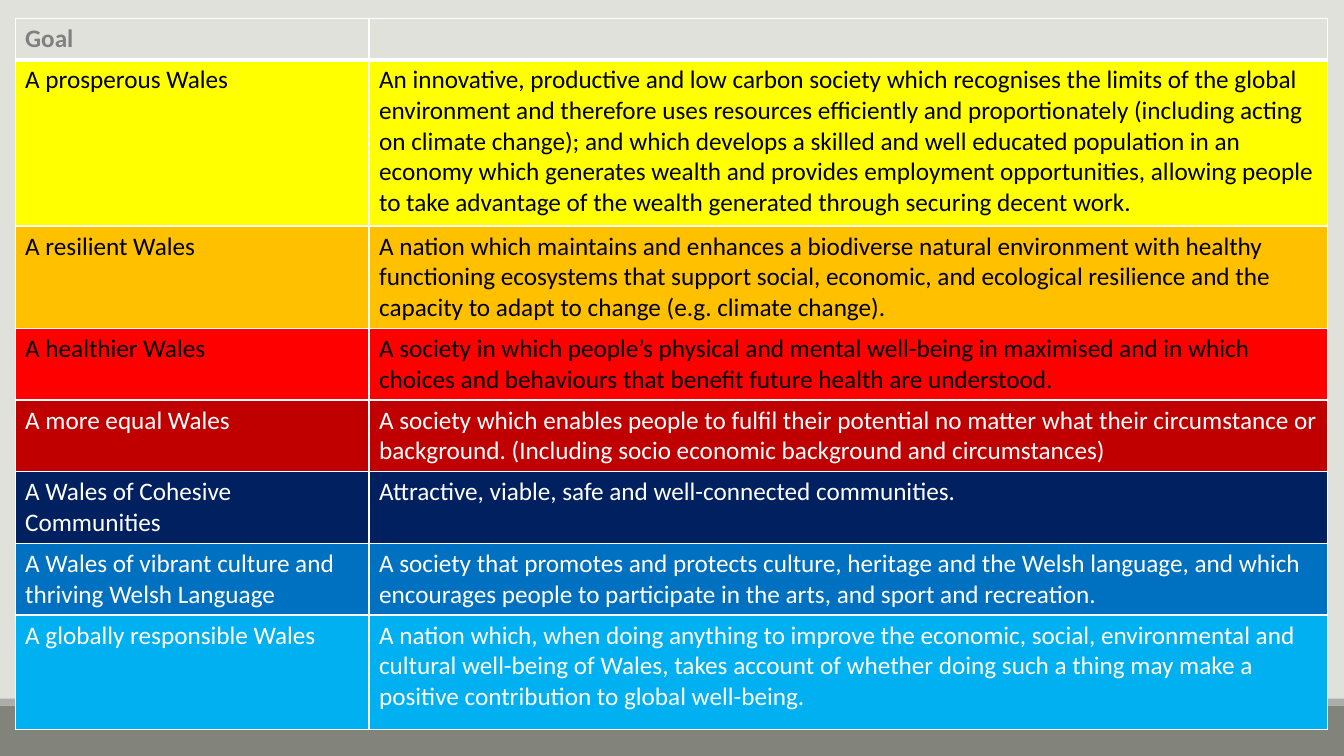
from dataclasses import dataclass

from lxml.etree import SubElement
from pptx import Presentation
from pptx.dml.color import RGBColor
from pptx.enum.shapes import MSO_SHAPE as Preset
from pptx.oxml.ns import qn
from pptx.util import Pt

FONT = "Calibri"
COLOURS = {
    "background": "E1E1DB",
    "footer": "82847C",
    "footer edge": "ACADA8",
    "grey": "808080",
    "black": "000000",
    "white": "FFFFFF",
    "yellow": "FFFF00",
    "amber": "FFC000",
    "red": "FF0000",
    "dark red": "C00000",
    "navy": "002060",
    "blue": "0070C0",
    "sky": "00B0F0",
}
SLIDE_WIDTH, SLIDE_HEIGHT = 960, 540
TABLE_LEFT, TABLE_TOP = 10.8, 13.4
COLUMN_WIDTHS = (252.8, 684.7)
HEADER_HEIGHT = 29.2
THIN, THICK = 1, 3


@dataclass(frozen=True)
class Band:
    top: float
    height: float
    colour: str


@dataclass(frozen=True)
class Goal:
    name: str
    description: str
    fill: str
    text_colour: str
    height: float


BANDS = (Band(504, 36, "footer"), Band(499, 5, "footer edge"))
GOALS = (
    Goal("A prosperous Wales",
         "An innovative, productive and low carbon society which recognises the limits of the "
         "global environment and therefore uses resources efficiently and proportionately "
         "(including acting on climate change); and which develops a skilled and well educated "
         "population in an economy which generates wealth and provides employment opportunities, "
         "allowing people to take advantage of the wealth generated through securing decent work.",
         "yellow", "black", 118.8),
    Goal("A resilient Wales",
         "A nation which maintains and enhances a biodiverse natural environment with healthy "
         "functioning ecosystems that support social, economic, and ecological resilience and "
         "the capacity to adapt to change (e.g. climate change).",
         "amber", "black", 73),
    Goal("A healthier Wales",
         "A society in which people’s physical and mental well-being in maximised and in which "
         "choices and behaviours that benefit future health are understood.",
         "red", "black", 51.2),
    Goal("A more equal Wales",
         "A society which enables people to fulfil their potential no matter what their "
         "circumstance or background. (Including socio economic background and circumstances)",
         "dark red", "white", 51.2),
    Goal("A Wales of Cohesive Communities",
         "Attractive, viable, safe and well-connected communities.",
         "navy", "white", 51.2),
    Goal("A Wales of vibrant culture and thriving Welsh Language",
         "A society that promotes and protects culture, heritage and the Welsh language, and "
         "which encourages people to participate in the arts, and sport and recreation.",
         "blue", "white", 51.2),
    Goal("A globally responsible Wales",
         "A nation which, when doing anything to improve the economic, social, environmental "
         "and cultural well-being of Wales, takes account of whether doing such a thing may "
         "make a positive contribution to global well-being.",
         "sky", "white", 82),
)


def rgb(name: str) -> RGBColor:
    return RGBColor.from_string(COLOURS[name])


def write_text(frame, text: str, *, colour: str, size: float = 18, bold: bool = False) -> None:
    run = frame.paragraphs[0].add_run()
    run.text = text
    run.font.name = FONT
    run.font.size = Pt(size)
    run.font.bold = bold
    run.font.color.rgb = rgb(colour)


def draw_band(slide, band: Band) -> None:
    shape = slide.shapes.add_shape(
        Preset.RECTANGLE, 0, Pt(band.top), Pt(SLIDE_WIDTH), Pt(band.height))
    shape.shadow.inherit = False
    shape.fill.solid()
    shape.fill.fore_color.rgb = rgb(band.colour)
    shape.line.fill.background()


def set_borders(cell, *, top: float = THIN, bottom: float = THIN) -> None:
    """Give the cell white borders; call before its fill, which must follow them in the XML."""
    properties = cell._tc.get_or_add_tcPr()
    for side, width in {"lnL": THIN, "lnR": THIN, "lnT": top, "lnB": bottom}.items():
        line = SubElement(properties, qn(f"a:{side}"), w=str(Pt(width)))
        fill = SubElement(line, qn("a:solidFill"))
        SubElement(fill, qn("a:srgbClr"), val=COLOURS["white"])


def draw_header(table) -> None:
    table.rows[0].height = Pt(HEADER_HEIGHT)
    for cell in table.rows[0].cells:
        set_borders(cell, bottom=THICK)
        cell.fill.background()
    write_text(table.cell(0, 0).text_frame, "Goal", colour="grey", bold=True)


def draw_goal(table, row: int, goal: Goal) -> None:
    table.rows[row].height = Pt(goal.height)
    for cell, text in zip(table.rows[row].cells, (goal.name, goal.description)):
        set_borders(cell, top=THICK if row == 1 else THIN)
        cell.fill.solid()
        cell.fill.fore_color.rgb = rgb(goal.fill)
        write_text(cell.text_frame, text, colour=goal.text_colour)


def draw_goals_table(slide) -> None:
    height = HEADER_HEIGHT + sum(goal.height for goal in GOALS)
    table = slide.shapes.add_table(
        len(GOALS) + 1, len(COLUMN_WIDTHS), Pt(TABLE_LEFT), Pt(TABLE_TOP),
        Pt(sum(COLUMN_WIDTHS)), Pt(height)).table
    table.horz_banding = False
    for column, width in zip(table.columns, COLUMN_WIDTHS):
        column.width = Pt(width)
    draw_header(table)
    for row, goal in enumerate(GOALS, start=1):
        draw_goal(table, row, goal)


def main() -> None:
    presentation = Presentation()
    presentation.slide_width = Pt(SLIDE_WIDTH)
    presentation.slide_height = Pt(SLIDE_HEIGHT)
    slide = presentation.slides.add_slide(presentation.slide_layouts[6])
    slide.background.fill.solid()
    slide.background.fill.fore_color.rgb = rgb("background")
    for band in BANDS:
        draw_band(slide, band)
    draw_goals_table(slide)
    presentation.save("out.pptx")


if __name__ == "__main__":
    main()
